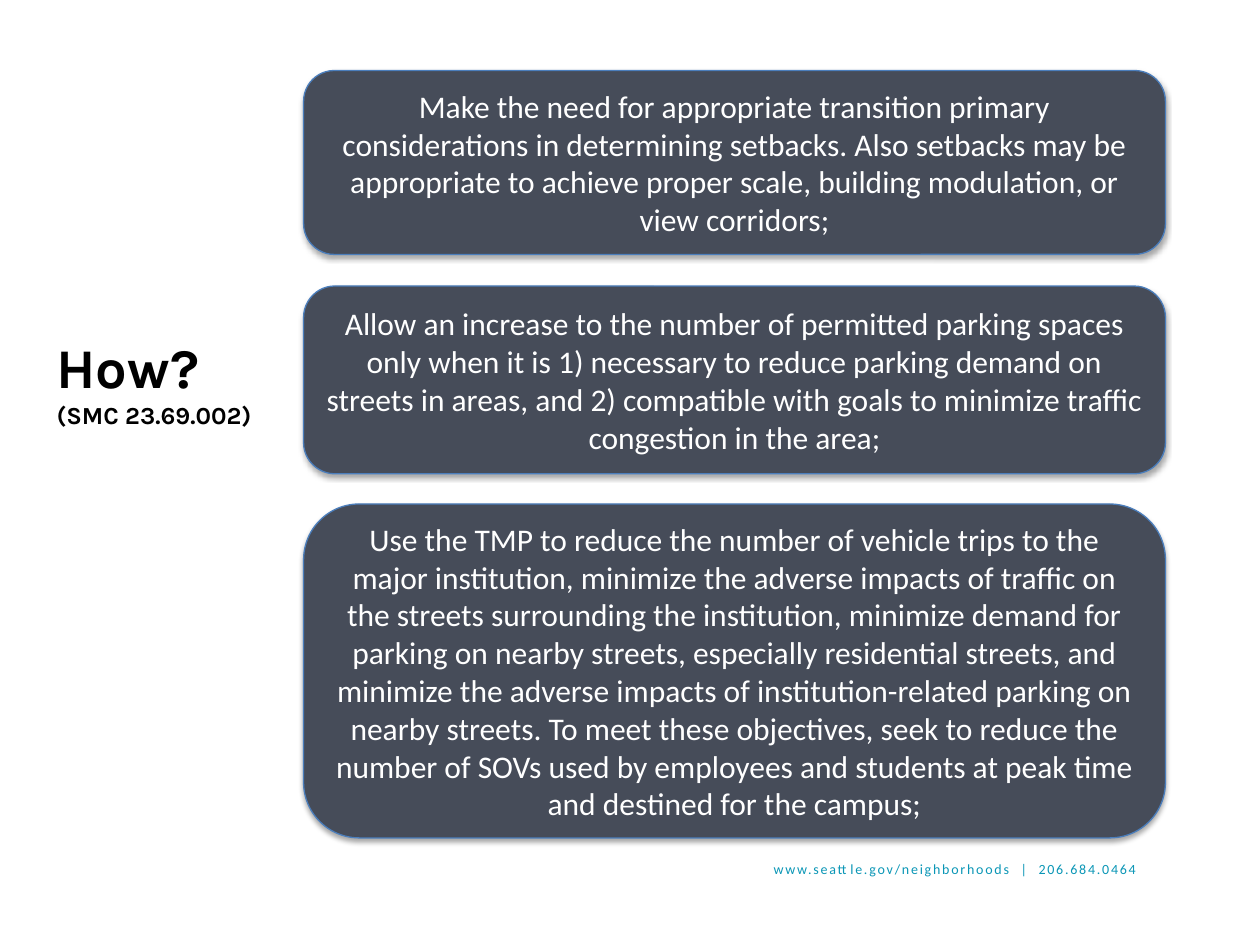
from lxml import etree
from pptx import Presentation
from pptx import util as u
from pptx.dml.color import RGBColor
from pptx.enum import shapes, text
from pptx.oxml import ns

SLATE = RGBColor(0x46, 0x4C, 0x59)
BLUE = RGBColor(0x4B, 0x7E, 0xBC)
TEAL = RGBColor(0x0A, 0x96, 0xB6)
WHITE = RGBColor(0xFF, 0xFF, 0xFF)
BLACK = RGBColor(0x00, 0x00, 0x00)

CARD_LEFT, CARD_WIDTH = 2.41, 6.84
CARDS = [  # top, height, wording
    (0.56, 1.46,
     "Make the need for appropriate transition primary considerations in "
     "determining setbacks. Also setbacks may be appropriate to achieve proper "
     "scale, building modulation, or view corridors;"),
    (2.27, 1.49,
     "Allow an increase to the number of permitted parking spaces only when it "
     "is 1) necessary to reduce parking demand on streets in areas, and 2) "
     "compatible with goals to minimize traffic congestion in the area;"),
    (4, 2.65,
     "Use the TMP to reduce the number of vehicle trips to the major "
     "institution, minimize the adverse impacts of traffic on the streets "
     "surrounding the institution, minimize demand for parking on nearby "
     "streets, especially residential streets, and minimize the adverse impacts "
     "of institution-related parking on nearby streets. To meet these "
     "objectives, seek to reduce the number of SOVs used by employees and "
     "students at peak time and destined for the campus;"),
]


class Page:
    """Holds the style and the current slide."""

    body = {"name": "Calibri", "size": u.Pt(18)}
    heading = {"name": "Karla", "size": u.Pt(32), "bold": True}
    subheading = {**heading, "size": u.Pt(14)}
    contact = {"name": "Calibri", "size": u.Pt(8)}

    def __init__(self, deck):
        self.slide = deck.slides.add_slide(deck.slide_layouts[6])

    def add_span(self, para, wording, style, color):
        span = para.add_run()
        span.text = wording
        for key, value in style.items():
            setattr(span.font, key, value)
        span.font.color.rgb = color
        return span

    def text_box(self, left, top, width, height, **frame_format):
        box = self.slide.shapes.add_textbox(*map(u.Inches, (left, top, width, height)))
        frame = box.text_frame
        for key, value in {"word_wrap": True, **frame_format}.items():
            setattr(frame, key, value)
        return frame

    def soft_shadow(self, shape):
        shape.shadow.inherit = False
        effects = shape._element.spPr.find(ns.qn("a:effectLst"))
        outer = etree.SubElement(
            effects, ns.qn("a:outerShdw"), blurRad=str(u.Pt(3.1)),
            dist=str(u.Pt(1.8)), dir="5400000", rotWithShape="0")
        color = etree.SubElement(outer, ns.qn("a:srgbClr"), val=str(BLACK))
        etree.SubElement(color, ns.qn("a:alpha"), val="35000")

    def card(self, top, height, wording):
        shape = self.slide.shapes.add_shape(
            shapes.MSO_SHAPE.ROUNDED_RECTANGLE,
            *map(u.Inches, (CARD_LEFT, top, CARD_WIDTH, height)))
        shape.fill.solid()
        shape.fill.fore_color.rgb = SLATE
        shape.line.color.rgb = BLUE
        shape.line.width = u.Pt(0.75)
        self.soft_shadow(shape)
        frame = shape.text_frame
        frame.word_wrap = True
        frame.vertical_anchor = text.MSO_ANCHOR.MIDDLE
        para = frame.paragraphs[0]
        para.alignment = text.PP_ALIGN.CENTER
        self.add_span(para, wording, self.body, WHITE)

    def title(self, heading, reference):
        frame = self.text_box(0.35, 1.48, 2.69, 4.87, margin_top=u.Inches(1.16))
        self.add_span(frame.paragraphs[0], heading, self.heading, BLACK)
        self.add_span(frame.add_paragraph(), reference, self.subheading, BLACK)

    def footer(self, wording):
        para = self.text_box(5.45, 6.78, 3.67, 0.35).paragraphs[0]
        para.alignment = text.PP_ALIGN.RIGHT
        span = self.add_span(para, wording, self.contact, TEAL)
        span.font._element.set("spc", "100")


def main():
    deck = Presentation()
    deck.slide_width, deck.slide_height = u.Inches(10), u.Inches(7.5)
    page = Page(deck)

    # Contact line and title
    page.footer("www.seattle.gov/neighborhoods  |  206.684.0464")
    page.title("How?", "(SMC 23.69.002)")

    # Cards
    for top, height, wording in CARDS:
        page.card(top, height, wording)

    deck.save("out.pptx")


if __name__ == "__main__":
    main()
